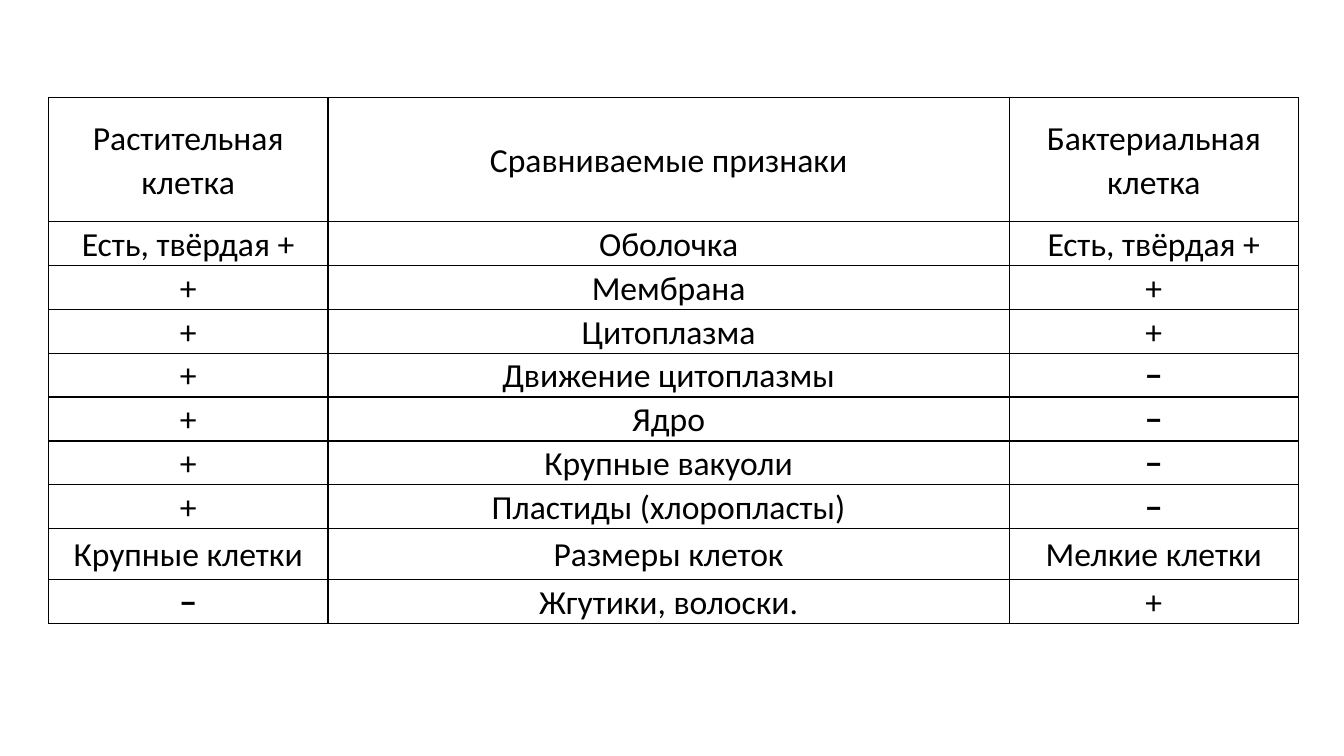
from lxml import etree
from pptx import Presentation
from pptx.dml.color import RGBColor
from pptx.enum.text import MSO_ANCHOR, PP_ALIGN
from pptx.oxml.ns import qn
from pptx.util import Inches, Pt

CENTER = PP_ALIGN.CENTER
MIDDLE = MSO_ANCHOR.MIDDLE
BORDER_SIDES = ("a:lnL", "a:lnR", "a:lnT", "a:lnB")
MINUS = "−"

COMPARISON = [
    ("Растительная клетка", "Сравниваемые признаки", "Бактериальная клетка"),
    ("Есть, твёрдая +", "Оболочка", "Есть, твёрдая +"),
    ("+", "Мембрана", "+"),
    ("+", "Цитоплазма", "+"),
    ("+", "Движение цитоплазмы", MINUS),
    ("+", "Ядро", MINUS),
    ("+", "Крупные вакуоли", MINUS),
    ("+", "Пластиды (хлоропласты)", MINUS),
    ("Крупные клетки", "Размеры клеток", "Мелкие клетки"),
    (MINUS, "Жгутики, волоски.", "+"),
]
COLUMN_SHARES = [20.8, 50.7, 21.5]
ROW_SHARES = [16.4, 5.6] + [4.1] * 5 + [5.2, 6.7, 4.1]


def color(hex_code):
    return RGBColor.from_string(hex_code)


class ComparisonSlide:
    font_name = "Calibri"
    font_size = Pt(24)
    ink = "000000"
    border_width = Pt(1)
    line_spacing = 1.07
    side_margin = Inches(0.07)

    def __init__(self, presentation):
        self.width = presentation.slide_width
        self.height = presentation.slide_height
        self.slide = presentation.slides.add_slide(presentation.slide_layouts[6])

    def across(self, percent):
        return round(self.width * percent / 100)

    def down(self, percent):
        return round(self.height * percent / 100)

    def table(self, left, top, height, column_shares, row_shares, content):
        frame = self.slide.shapes.add_table(
            len(row_shares), len(column_shares), self.across(left), self.down(top),
            self.across(sum(column_shares)), self.down(height))
        grid = frame.table
        grid.horz_banding = False
        grid.first_row = False
        for column, share in zip(grid.columns, column_shares):
            column.width = self.across(share)
        for row, share, wordings in zip(grid.rows, row_shares, content):
            row.height = self.down(share)
            for cell, wording in zip(row.cells, wordings):
                self.cell(cell, wording)
        frame.height = self.down(height)

    def cell(self, cell, wording):
        self.borders(cell)
        cell.fill.background()
        cell.vertical_anchor = MIDDLE
        cell.margin_left = cell.margin_right = self.side_margin
        cell.margin_top = cell.margin_bottom = 0
        cell.text = wording
        paragraph = cell.text_frame.paragraphs[0]
        paragraph.alignment = CENTER
        paragraph.line_spacing = self.line_spacing
        font = paragraph.font
        font.name = self.font_name
        font.size = self.font_size
        font.bold = wording == MINUS
        font.color.rgb = color(self.ink)

    def borders(self, cell):
        properties = cell._tc.get_or_add_tcPr()
        for side in BORDER_SIDES:
            line = etree.SubElement(properties, qn(side), w=str(self.border_width))
            fill = etree.SubElement(line, qn("a:solidFill"))
            etree.SubElement(fill, qn("a:srgbClr"), val=self.ink)


def main():
    presentation = Presentation()
    presentation.slide_width = Inches(13.33)
    presentation.slide_height = Inches(7.5)
    page = ComparisonSlide(presentation)
    page.table(3.6, 12.9, 68.8, COLUMN_SHARES, ROW_SHARES, COMPARISON)
    presentation.save("out.pptx")


if __name__ == "__main__":
    main()
